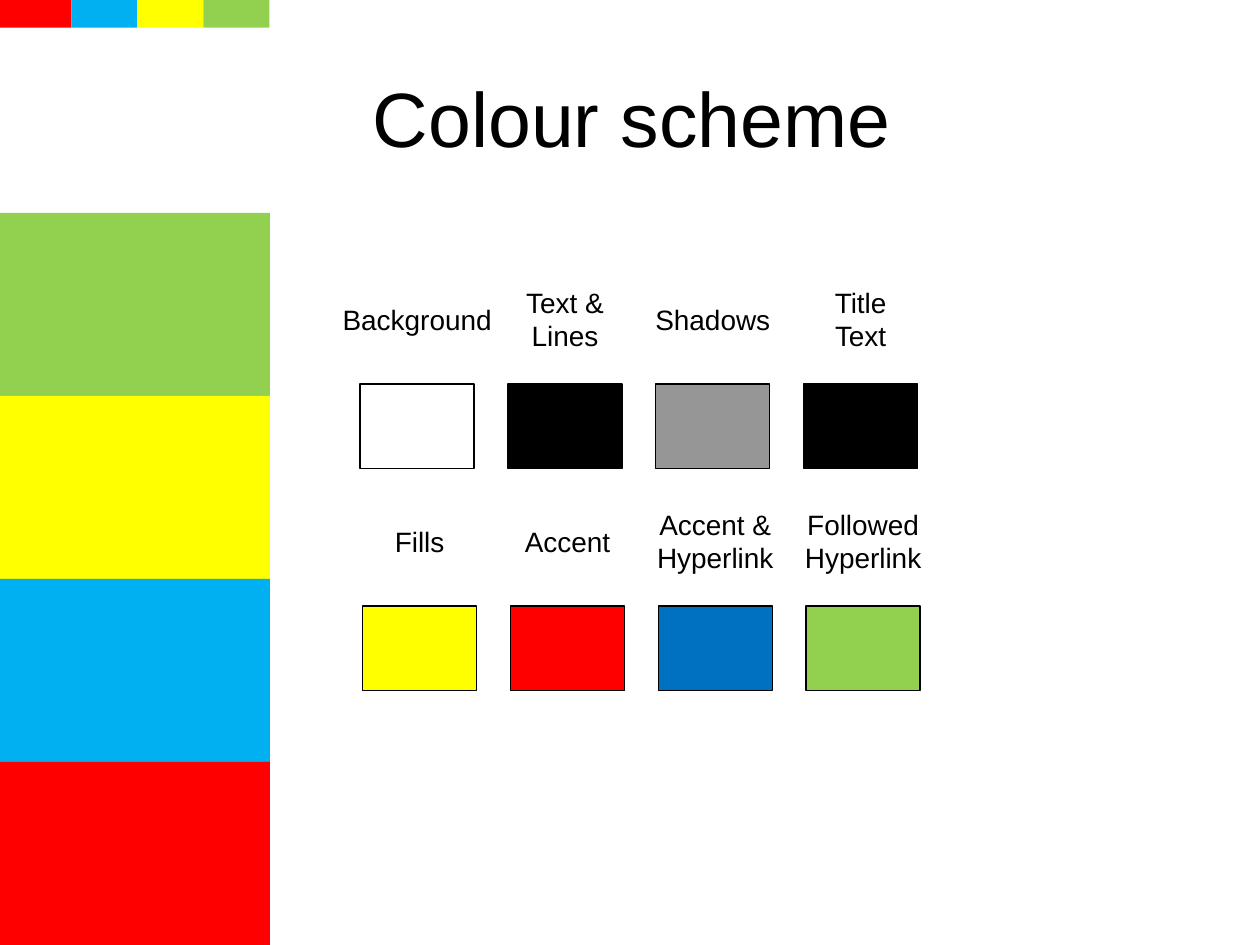
"""Build the colour scheme slide with its side bands, swatches and labels."""
import copy
import dataclasses

import pptx
import pptx.dml.color
import pptx.enum.shapes
import pptx.enum.text
import pptx.oxml.ns
import pptx.util

Cm = pptx.util.Cm
Pt = pptx.util.Pt


@dataclasses.dataclass(frozen=True)
class Theme:
    font: str = "Arial"
    title_size: int = 44
    label_size: int = 16
    line_width: float = 0.75
    white: str = "FFFFFF"
    black: str = "000000"
    grey: str = "969696"
    red: str = "FF0000"
    yellow: str = "FFFF00"
    green: str = "92D050"
    sky: str = "00B0F0"
    blue: str = "0070C0"


@dataclasses.dataclass(frozen=True)
class Swatch:
    label: str
    color: str
    label_width: float


@dataclasses.dataclass(frozen=True)
class SwatchRow:
    left: float
    top: float
    swatches: tuple[Swatch, ...]


THEME = Theme()
SLIDE_W, SLIDE_H = 25.4, 19.05
BAND_W, BAND_H = 5.44, 3.69
TAB_FIRST_W, TAB_W, TAB_H = 1.44, 1.33, 0.56
SWATCH_W, SWATCH_H, SWATCH_PITCH = 2.3, 1.7, 2.98
LABEL_RISE = 1.3
LABEL_HEIGHTS = {1: 0.94, 2: 1.63}
BAND_COLORS = (THEME.green, THEME.yellow, THEME.sky, THEME.red)
ROWS = (
    SwatchRow(7.26, 7.74, (
        Swatch("Background", THEME.white, 3.54),
        Swatch("Text &\nLines", THEME.black, 2.14),
        Swatch("Shadows", THEME.grey, 2.84),
        Swatch("Title\vText", THEME.black, 1.6),
    )),
    SwatchRow(7.31, 12.22, (
        Swatch("Fills", THEME.yellow, 1.54),
        Swatch("Accent", THEME.red, 2.26),
        Swatch("Accent &\nHyperlink", THEME.blue, 2.92),
        Swatch("Followed\nHyperlink", THEME.green, 2.92),
    )),
)


def rgb(color: str) -> pptx.dml.color.RGBColor:
    return pptx.dml.color.RGBColor.from_string(color)


def write_text(tf, text: str, *, size: int, color: str = THEME.black,
               align=pptx.enum.text.PP_ALIGN.CENTER) -> None:
    tf.text = text
    for p in tf.paragraphs:
        p.alignment = align
        for r in p.runs:
            r.font.name = THEME.font
            r.font.size = Pt(size)
            r.font.color.rgb = rgb(color)
        for br in p._p.findall(pptx.oxml.ns.qn("a:br")):
            br.insert(0, copy.deepcopy(p.runs[0]._r.rPr))


def add_rect(s, left: float, top: float, width: float, height: float,
             fill: str, line: str | None = None) -> None:
    sp = s.shapes.add_shape(pptx.enum.shapes.MSO_SHAPE.RECTANGLE,
                            Cm(left), Cm(top), Cm(width), Cm(height))
    sp.shadow.inherit = False
    sp.fill.solid()
    sp.fill.fore_color.rgb = rgb(fill)
    if line is None:
        sp.line.fill.background()
    else:
        sp.line.color.rgb = rgb(line)
        sp.line.width = Pt(THEME.line_width)


def add_label(s, text: str, center_x: float, center_y: float, width: float) -> None:
    height = LABEL_HEIGHTS[len(text.splitlines())]
    sp = s.shapes.add_textbox(Cm(center_x - width / 2), Cm(center_y - height / 2),
                              Cm(width), Cm(height))
    tf = sp.text_frame
    tf.word_wrap = False
    tf.auto_size = pptx.enum.text.MSO_AUTO_SIZE.SHAPE_TO_FIT_TEXT
    write_text(tf, text, size=THEME.label_size)


def add_title(s, text: str) -> None:
    sp = s.shapes.title
    sp.left, sp.top, sp.width, sp.height = Cm(1.35), Cm(0.76), Cm(22.78), Cm(3.18)
    tf = sp.text_frame
    tf.auto_size = pptx.enum.text.MSO_AUTO_SIZE.NONE
    tf.vertical_anchor = pptx.enum.text.MSO_ANCHOR.MIDDLE
    write_text(tf, text, size=THEME.title_size)


def add_bands(s) -> None:
    top = SLIDE_H - BAND_H * len(BAND_COLORS)
    for i, color in enumerate(BAND_COLORS):
        add_rect(s, 0, top + i * BAND_H, BAND_W, BAND_H, color)
    left = 0
    for i, color in enumerate(reversed(BAND_COLORS)):
        width = TAB_W if i else TAB_FIRST_W
        add_rect(s, left, 0, width, TAB_H, color)
        left += width


def add_swatch_row(s, row: SwatchRow) -> None:
    for i, swatch in enumerate(row.swatches):
        left = row.left + i * SWATCH_PITCH
        add_rect(s, left, row.top, SWATCH_W, SWATCH_H, swatch.color, THEME.black)
        add_label(s, swatch.label, left + SWATCH_W / 2, row.top - LABEL_RISE,
                  swatch.label_width)


def main() -> None:
    prs = pptx.Presentation()
    prs.slide_width, prs.slide_height = Cm(SLIDE_W), Cm(SLIDE_H)
    s = prs.slides.add_slide(prs.slide_layouts.get_by_name("Title Only"))
    s.background.fill.solid()
    s.background.fill.fore_color.rgb = rgb(THEME.white)
    add_bands(s)
    add_title(s, "Colour scheme")
    for row in ROWS:
        add_swatch_row(s, row)
    prs.save("out.pptx")


if __name__ == "__main__":
    main()
